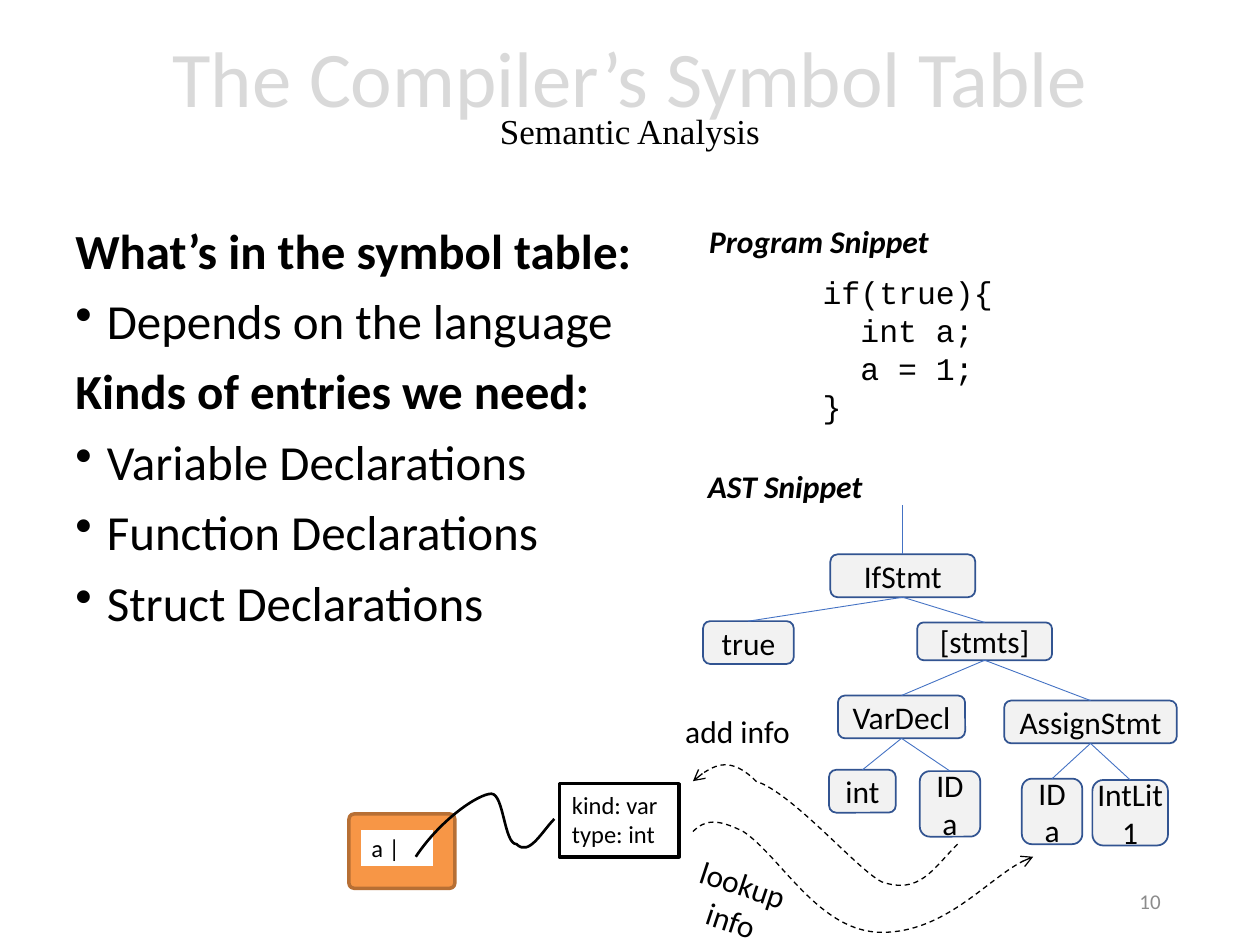
import dataclasses
import typing

import lxml.etree
import pptx
import pptx.dml.color
import pptx.enum.dml
import pptx.enum.shapes
import pptx.enum.text
import pptx.oxml
import pptx.oxml.ns
import pptx.util

COLUMNS, ROWS = 100, 75
CELL = pptx.util.Inches(0.1)
ALIGN = pptx.enum.text.PP_ALIGN
ANCHOR = pptx.enum.text.MSO_ANCHOR
SHAPE = pptx.enum.shapes.MSO_SHAPE
qn = pptx.oxml.ns.qn
Point = tuple[float, float]


@dataclasses.dataclass(frozen=True)
class Area:
    column: float
    row: float
    columns: float
    rows: float

    def lengths(self) -> list[int]:
        return [round(CELL * n) for n in (self.column, self.row, self.columns, self.rows)]


@dataclasses.dataclass(frozen=True)
class Style:
    size: float = 18
    name: str = "Calibri"
    color: str = "000000"
    bold: bool = False
    italic: bool = False
    align: typing.Any = ALIGN.LEFT
    anchor: typing.Any = ANCHOR.TOP


@dataclasses.dataclass(frozen=True)
class Look:
    kind: typing.Any
    fill: str
    line: str
    width: float
    padded: bool = True


@dataclasses.dataclass(frozen=True)
class Node:
    key: str
    text: str
    area: Area
    parent: str = ""


@dataclasses.dataclass(frozen=True)
class Label:
    text: str
    area: Area
    style: Style = Style()
    wrap: bool = False
    turn: float = 0


@dataclasses.dataclass(frozen=True)
class Curve:
    points: list[Point]
    width: float
    arrow: bool = False


NODE_LOOK = Look(SHAPE.ROUNDED_RECTANGLE, "F2F2F2", "325491", 1, padded=False)
NODE_STYLE = Style(align=ALIGN.CENTER, anchor=ANCHOR.MIDDLE)
HEADING = Style(bold=True, italic=True)
TREE = [
    Node("if", "IfStmt", Area(65.9, 44, 11.5, 3.4)),
    Node("true", "true", Area(55.8, 49.3, 7.2, 3.4), "if"),
    Node("stmts", "[stmts]", Area(72.8, 49.4, 10.7, 3), "if"),
    Node("decl", "VarDecl", Area(66.5, 55.2, 10.1, 3.4), "stmts"),
    Node("assign", "AssignStmt", Area(79.7, 55.6, 13.7, 3.4), "stmts"),
    Node("int", "int", Area(65.8, 61.1, 5.3, 3.4), "decl"),
    Node("declared", "ID\na", Area(73, 61.2, 4.8, 5.2), "decl"),
    Node("assigned", "ID\na", Area(81.1, 61.8, 4.8, 5.2), "assign"),
    Node("literal", "IntLit\n1", Area(86.7, 61.9, 6, 5.2), "assign"),
]
LABELS = [
    Label("10", Area(70.6, 69.5, 22.5, 4),
          Style(12, color="8C8C8C", align=ALIGN.RIGHT, anchor=ANCHOR.MIDDLE), wrap=True),
    Label("if(true){\n  int a;\n  a = 1;\n}", Area(64.3, 21.2, 23.5, 13.1),
          Style(name="Courier New"), wrap=True),
    Label("Program Snippet", Area(55.3, 17.1, 19.7, 4), HEADING),
    Label("AST Snippet", Area(55.2, 36.6, 14.5, 4), HEADING),
    Label("add info", Area(53.4, 56, 10.4, 4)),
    Label("lookup\ninfo", Area(54.1, 68.1, 9, 6.4), Style(align=ALIGN.CENTER), turn=18.4),
]
CURVES = [
    Curve([(75.7, 67.2), (74.2, 69.1), (72.7, 71), (70.1, 70.1), (67.5, 69.1), (62.7, 63),
           (60.1, 61.6), (57.6, 60.2), (56.2, 60.9), (54.9, 61.6)], 0.75, arrow=True),
    Curve([(55.2, 65.8), (56.3, 65.4), (56.8, 65.1), (59.3, 66.4), (61.8, 67.8), (65.2, 73.9),
           (70.1, 73.7), (75.1, 73.6), (78.7, 69), (81.8, 67.8)], 0.75, arrow=True),
    Curve([(33, 67.7), (35.3, 65.2), (37.6, 62.7), (39, 62.7), (40.3, 62.6), (40.3, 67),
           (41.2, 67.4), (42.1, 67.8), (43.2, 66.5), (44.4, 65.1)], 1.5),
]
BODY = [
    ("What’s in the symbol table:", False),
    ("Depends on the language", True),
    ("Kinds of entries we need:", False),
    ("Variable Declarations", True),
    ("Function Declarations", True),
    ("Struct Declarations", True),
]


def rgb(color: str) -> pptx.dml.color.RGBColor:
    return pptx.dml.color.RGBColor.from_string(color)


def set_font(font, style: Style) -> None:
    font.size = pptx.util.Pt(style.size)
    font.name = style.name
    font.bold = style.bold
    font.italic = style.italic
    font.color.rgb = rgb(style.color)


def write(frame, text: str, style: Style) -> None:
    frame.text = text
    frame.vertical_anchor = style.anchor
    for para in frame.paragraphs:
        para.alignment = style.align
        set_font(para.font, style)


def set_line(line, color: str, width: float) -> None:
    line.color.rgb = rgb(color)
    line.width = pptx.util.Pt(width)


def add_box(page, area: Area, look: Look, text: str = "", style: Style = Style()):
    box = page.shapes.add_shape(look.kind, *area.lengths())
    box.shadow.inherit = False
    box.fill.solid()
    box.fill.fore_color.rgb = rgb(look.fill)
    set_line(box.line, look.line, look.width)
    frame = box.text_frame
    frame.word_wrap = True
    if not look.padded:
        frame.margin_left = frame.margin_right = frame.margin_top = frame.margin_bottom = 0
    write(frame, text, style)
    return box


def add_label(page, label: Label) -> None:
    box = page.shapes.add_textbox(*label.area.lengths())
    box.rotation = label.turn
    box.text_frame.word_wrap = label.wrap
    write(box.text_frame, label.text, label.style)


def add_edge(page, child, parent=None) -> None:
    x = child.left + child.width // 2
    connector = page.shapes.add_connector(
        pptx.enum.shapes.MSO_CONNECTOR.STRAIGHT, x, round(CELL * 40.1), x, child.top)
    if parent is not None:
        connector.begin_connect(parent, 2)
    connector.end_connect(child, 0)
    set_line(connector.line, "4472C4", 0.5)
    lxml.etree.SubElement(connector._element.spPr, qn("a:effectLst"))


def add_tree(page, nodes: list[Node]) -> None:
    boxes = {node.key: add_box(page, node.area, NODE_LOOK, node.text, NODE_STYLE)
             for node in nodes}
    for node in nodes:
        add_edge(page, boxes[node.key], boxes.get(node.parent))


def add_curve(page, curve: Curve) -> None:
    builder = page.shapes.build_freeform(*curve.points[0], scale=CELL)
    builder.add_line_segments(curve.points[1:], close=False)
    shape = builder.convert_to_shape()
    shape.shadow.inherit = False
    shape.fill.background()
    set_line(shape.line, "000000", curve.width)
    segments = list(shape._element.iter(qn("a:lnTo")))
    outline = segments[0].getparent()
    for start in range(0, len(segments), 3):
        bezier = lxml.etree.SubElement(outline, qn("a:cubicBezTo"))
        for segment in segments[start:start + 3]:
            bezier.append(segment[0])
            outline.remove(segment)
    if curve.arrow:
        shape.line.dash_style = pptx.enum.dml.MSO_LINE.DASH
        lxml.etree.SubElement(shape.line._get_or_add_ln(), qn("a:tailEnd"), type="arrow")


def add_title(page) -> None:
    box = page.shapes.add_textbox(*Area(6.9, 0.9, 86.2, 14.5).lengths())
    box.text_frame.word_wrap = True
    box.text_frame.vertical_anchor = ANCHOR.MIDDLE
    para = box.text_frame.paragraphs[0]
    para.alignment = ALIGN.CENTER
    para.line_spacing = 0.7
    span = para.add_run()
    span.text = "The Compiler’s Symbol Table"
    set_font(span.font, Style(45, color="D9D9D9"))
    para.add_line_break()
    span = para.add_run()
    span.text = "Semantic Analysis"
    set_font(span.font, Style(20, "Times New Roman"))


def add_body(page) -> None:
    box = page.shapes.add_textbox(*Area(5, 17.5, 49.6, 35).lengths())
    frame = box.text_frame
    frame.word_wrap = True
    write(frame, "\n".join(text for text, _ in BODY), Style(28))
    for para, (_, bulleted) in zip(frame.paragraphs, BODY):
        para.line_spacing = 0.9
        para.space_before = pptx.util.Pt(10)
        para.font.bold = not bulleted
        if bulleted:
            properties = para._p.get_or_add_pPr()
            indent = pptx.util.Inches(0.25)
            properties.set("marL", str(indent))
            properties.set("indent", str(-indent))
            bullet = pptx.oxml.parse_xml(
                '<a:buChar xmlns:a="http://schemas.openxmlformats.org/drawingml/2006/main" char="•"/>')
            properties.find(qn("a:defRPr")).addprevious(bullet)


def main() -> None:
    deck = pptx.Presentation()
    deck.slide_width, deck.slide_height = CELL * COLUMNS, CELL * ROWS
    page = deck.slides.add_slide(deck.slide_layouts[6])
    add_title(page)
    add_body(page)
    add_tree(page, TREE)
    for label in LABELS:
        add_label(page, label)
    table = add_box(page, Area(27.7, 64.6, 8.4, 5.9),
                    Look(SHAPE.ROUNDED_RECTANGLE, "F79646", "B76F34", 2))
    table.adjustments[0] = 0.07
    add_box(page, Area(28.5, 65.7, 6, 3.2), Look(SHAPE.RECTANGLE, "FFFFFF", "F79646", 2),
            "a |", Style(14, anchor=ANCHOR.MIDDLE))
    add_box(page, Area(44.4, 62.2, 9.5, 5.8), Look(SHAPE.RECTANGLE, "FFFFFF", "000000", 2),
            "kind: var\ntype: int", Style(14))
    for curve in CURVES:
        add_curve(page, curve)
    deck.save("out.pptx")


if __name__ == "__main__":
    main()
